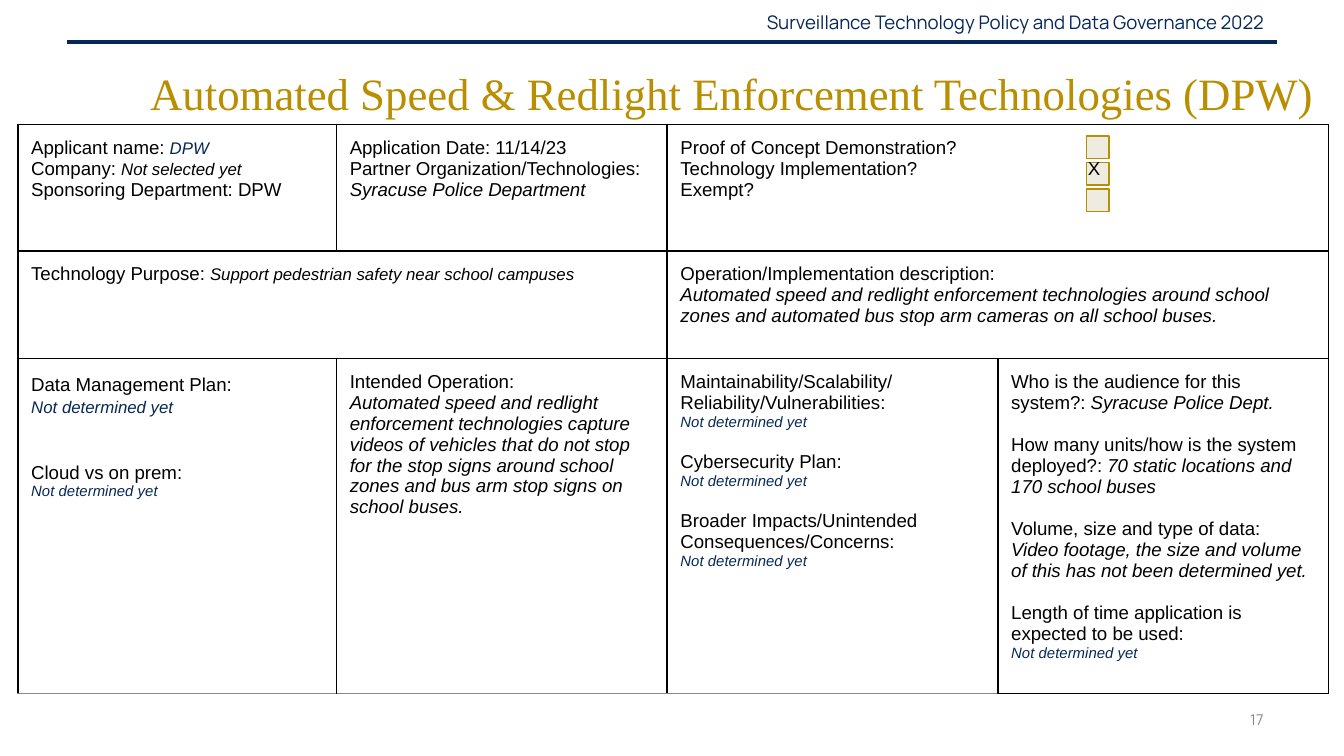
from pptx import Presentation
from pptx.dml.color import RGBColor
from pptx.enum.shapes import MSO_CONNECTOR, MSO_SHAPE
from pptx.enum.text import MSO_ANCHOR, MSO_AUTO_SIZE, PP_ALIGN
from pptx.oxml.ns import qn
from pptx.util import Cm, Pt
from lxml.etree import SubElement

NAVY, GOLD, BEIGE, GRAY, BLACK = "062858", "B98E00", "EEECE1", "888888", "000000"
BLANK_LINE = 11.5


def color(value):
    return RGBColor.from_string(value)


def label(text):
    return text, 10, BLACK, False


def value(text, size=10):
    return text, size, BLACK, True


def pending(size=8):
    return "Not determined yet", size, NAVY, True


def line(*spans, gap=0, spacing=None):
    """One paragraph: its spans, the points above it and its line spacing."""
    return spans, gap, spacing


class FormPage:
    def __init__(self, deck):
        self.page = deck.slides.add_slide(deck.slide_layouts[5])

    def span(self, para, text, size, hue, italic=False, font="Arial"):
        span = para.add_run()
        span.text = text
        span.font.size = Pt(size)
        span.font.name = font
        span.font.italic = italic
        span.font.bold = False
        span.font.color.rgb = color(hue)

    def title(self, text):
        box = self.page.shapes.title
        box.left, box.top, box.width, box.height = Cm(0.5), Cm(0.77), Cm(24.57), Cm(3.4)
        frame = box.text_frame
        frame.auto_size = MSO_AUTO_SIZE.NONE
        frame.vertical_anchor = MSO_ANCHOR.TOP
        frame.margin_top = Cm(0.48)
        para = frame.paragraphs[0]
        para.alignment = PP_ALIGN.RIGHT
        self.span(para, text, 24, GOLD, font="Times New Roman")

    def margin_text(self, text, left, top, width, size, hue):
        box = self.page.shapes.add_textbox(Cm(left), Cm(top), Cm(width), Cm(0.76))
        frame = box.text_frame
        frame.word_wrap = True
        frame.vertical_anchor = MSO_ANCHOR.MIDDLE
        para = frame.paragraphs[0]
        para.alignment = PP_ALIGN.RIGHT
        self.span(para, text, size, hue, font="Manrope")

    def rule(self, left, right, top):
        rule = self.page.shapes.add_connector(
            MSO_CONNECTOR.STRAIGHT, Cm(left), Cm(top), Cm(right), Cm(top))
        rule.line.color.rgb = color(NAVY)
        rule.line.width = Pt(2.25)
        SubElement(rule._element.spPr, qn("a:effectLst"))

    def checkbox(self, row):
        box = self.page.shapes.add_shape(
            MSO_SHAPE.RECTANGLE, Cm(20.53), Cm(2.57 + 0.5 * row), Cm(0.43), Cm(0.43))
        box.shadow.inherit = False
        box.fill.solid()
        box.fill.fore_color.rgb = color(BEIGE)
        box.line.color.rgb = color(GOLD)
        box.line.width = Pt(0.75)

    def table(self, left, top, widths, heights):
        table = self.page.shapes.add_table(
            len(heights), len(widths), Cm(left), Cm(top),
            Cm(sum(widths)), Cm(sum(heights))).table
        table.first_row = table.horz_banding = False
        for column, width in zip(table.columns, widths):
            column.width = Cm(width)
        for row, height in zip(table.rows, heights):
            row.height = Cm(height)
        return table

    def borders(self, cell, bottom=BLACK):
        properties = cell._tc.get_or_add_tcPr()
        for side in "LRTB":
            hue = bottom if side == "B" else BLACK
            width = Pt(1) if hue == BLACK else Pt(0.75)
            edge = SubElement(properties, qn(f"a:ln{side}"), w=str(width))
            fill = SubElement(edge, qn("a:solidFill"))
            SubElement(fill, qn("a:srgbClr"), val=hue)
        cell.fill.background()

    def fill_cell(self, cell, lines):
        cell.margin_left = cell.margin_right = Cm(0.25)
        cell.margin_top = cell.margin_bottom = Cm(0.25)
        frame = cell.text_frame
        for index, (spans, gap, spacing) in enumerate(lines):
            para = frame.add_paragraph() if index else frame.paragraphs[0]
            para.space_before = Pt(gap)
            if spacing:
                para.line_spacing = spacing
            for span in spans:
                self.span(para, *span)

    def tab_stop(self, para, position):
        stops = SubElement(para._p.get_or_add_pPr(), qn("a:tabLst"))
        SubElement(stops, qn("a:tab"), pos=str(Cm(position)), algn="l")


CELLS = {
    (0, 0): [
        line(label("Applicant name: "), ("DPW", 9, NAVY, True)),
        line(label("Company: "), value("Not selected yet", 9)),
        line(label("Sponsoring Department: DPW")),
    ],
    (0, 1): [
        line(label("Application Date: 11/14/23")),
        line(label("Partner Organization/Technologies:")),
        line(value("Syracuse Police Department")),
    ],
    (0, 2): [
        line(label("Proof of Concept Demonstration?")),
        line(label("Technology Implementation?\tX")),
        line(label("Exempt?")),
    ],
    (1, 0): [
        line(label("Technology Purpose: "),
             value("Support pedestrian safety near school campuses", 9)),
    ],
    (1, 2): [
        line(label("Operation/Implementation description:")),
        line(value("Automated speed and redlight enforcement technologies around school "
                   "zones and automated bus stop arm cameras on all school buses.")),
    ],
    (2, 0): [
        line(label("Data Management Plan:"), spacing=1.15),
        line(pending(9), spacing=1.15),
        line(label("Cloud vs on prem:"), gap=24),
        line(pending()),
    ],
    (2, 1): [
        line(label("Intended Operation:")),
        line(value("Automated speed and redlight enforcement technologies capture videos "
                   "of vehicles that do not stop for the stop signs around school zones "
                   "and bus arm stop signs on school buses.")),
    ],
    (2, 2): [
        line(label("Maintainability/Scalability/Reliability/Vulnerabilities:")),
        line(pending()),
        line(label("Cybersecurity Plan:"), gap=BLANK_LINE),
        line(pending()),
        line(label("Broader Impacts/Unintended Consequences/Concerns:"), gap=BLANK_LINE),
        line(pending()),
    ],
    (2, 3): [
        line(label("Who is the audience for this system?: "), value("Syracuse Police Dept.")),
        line(label("How many units/how is the system deployed?: "),
             value("70 static locations and 170 school buses"), gap=BLANK_LINE),
        line(label("Volume, size and type of data:"), gap=BLANK_LINE),
        line(value("Video footage, the size and volume of this has not been determined yet.")),
        line(label("Length of time application is expected to be used:"), gap=BLANK_LINE),
        line(pending()),
    ],
}


def main():
    deck = Presentation()
    deck.slide_width, deck.slide_height = Cm(25.4), Cm(14.29)
    form = FormPage(deck)
    form.margin_text("Surveillance Technology Policy and Data Governance 2022",
                     13.23, 0.03, 10.9, 10, NAVY)
    form.margin_text("17", 18.21, 13.23, 5.92, 8, GRAY)
    form.rule(1.27, 24.13, 0.79)
    form.title("Automated Speed & Redlight Enforcement Technologies (DPW)")

    form.checkbox(1)
    table = form.table(0.34, 2.35, [6.02, 6.25, 6.25, 6.25], [2.39, 2.04, 6.33])
    for row in range(3):
        for column in range(4):
            gray_bottom = row == 2 and column < 3
            form.borders(table.cell(row, column), GRAY if gray_bottom else BLACK)
    for row, column in [(0, 2), (1, 0), (1, 2)]:
        table.cell(row, column).merge(table.cell(row, column + 1))
    for (row, column), lines in CELLS.items():
        form.fill_cell(table.cell(row, column), lines)
    form.tab_stop(table.cell(0, 2).text_frame.paragraphs[1], 7.7)
    form.checkbox(0)
    form.checkbox(2)
    deck.save("out.pptx")


if __name__ == "__main__":
    main()
